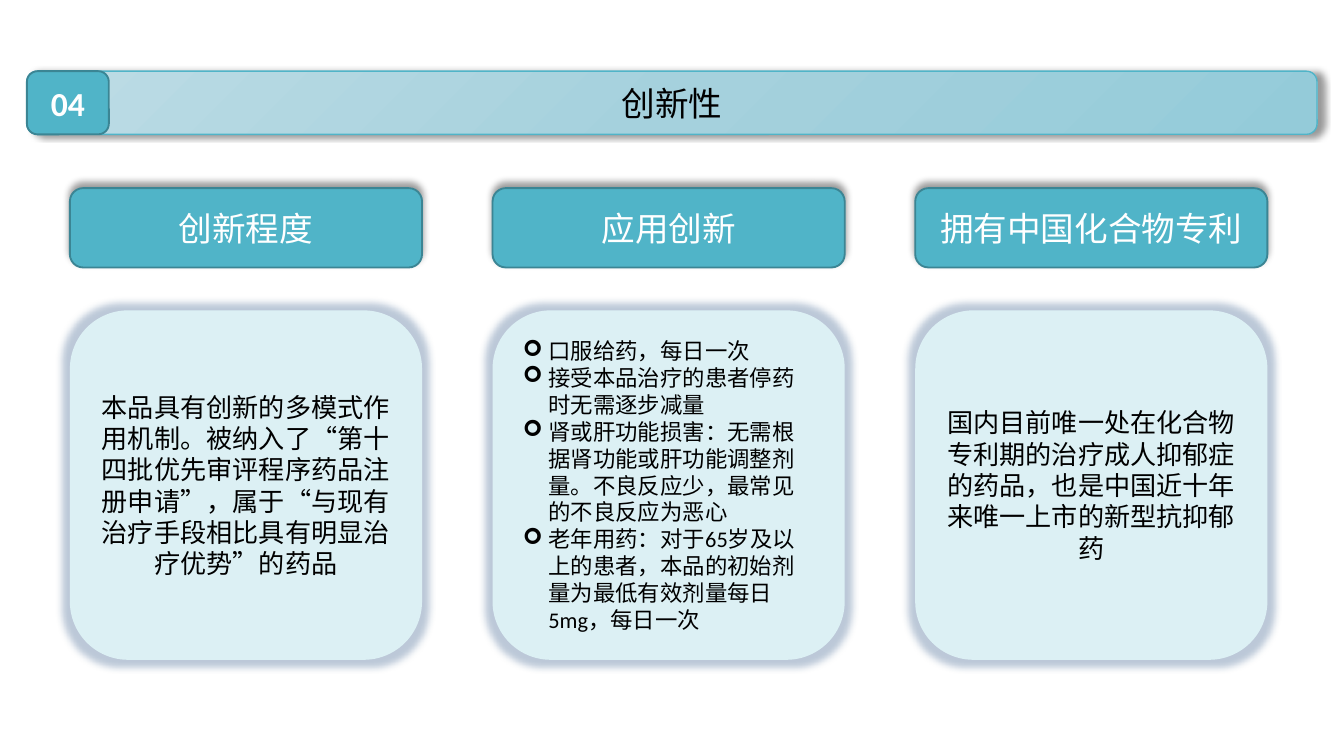
from copy import deepcopy
from lxml.etree import SubElement
from pptx import Presentation
from pptx.dml.color import RGBColor
from pptx.enum.shapes import MSO_SHAPE
from pptx.enum.text import MSO_ANCHOR, PP_ALIGN
from pptx.oxml.ns import qn
from pptx.util import Inches, Pt


def paint(code):
    return RGBColor.from_string(code)


class Deck:
    font = "Calibri"
    teal, edge, pale = "50B4C8", "3B8594", "DCF0F4"
    black, white, navy = "000000", "FFFFFF", "1F497D"
    fade = ("BDDCE5", "A5D1DD", "94CBD9")

    def __init__(self, wide, high):
        self.show = Presentation()
        self.show.slide_width = Inches(wide)
        self.show.slide_height = Inches(high)
        self.slide = self.show.slides.add_slide(self.show.slide_layouts[6])

    def box(self, left, top, wide, high, fill, line=None, width=1):
        shape = self.slide.shapes.add_shape(
            MSO_SHAPE.ROUNDED_RECTANGLE,
            Inches(left), Inches(top), Inches(wide), Inches(high))
        shape.shadow.inherit = False
        shape.fill.solid()
        shape.fill.fore_color.rgb = paint(fill)
        if line:
            shape.line.color.rgb = paint(line)
            shape.line.width = Pt(width)
        else:
            shape.line.fill.background()
        shape.text_frame.word_wrap = True
        shape.text_frame.vertical_anchor = MSO_ANCHOR.MIDDLE
        return shape

    def effect(self, shape, kind, color, alpha, **sizes):
        group = shape._element.spPr.find(qn("a:effectLst"))
        node = SubElement(group, qn(kind), {k: str(v) for k, v in sizes.items()})
        tint = SubElement(node, qn("a:srgbClr"), val=color)
        SubElement(tint, qn("a:alpha"), val=str(alpha * 1000))

    def shadow(self, shape, angle):
        self.effect(shape, "a:outerShdw", self.black, 40, blurRad=Pt(4),
                    dist=Pt(3), dir=angle * 60000, rotWithShape=0)

    def blend(self, shape):
        fill = shape.fill
        fill.gradient()
        fill.gradient_angle = 315
        group = shape._element.spPr.find(".//" + qn("a:gsLst"))
        group.insert(1, deepcopy(group[0]))
        for stop, color, place in zip(fill.gradient_stops, self.fade, (0, 0.5, 1)):
            stop.color.rgb = paint(color)
            stop.position = place

    def text(self, shape, lines, size, color, bold=False):
        frame = shape.text_frame
        for i, line in enumerate(lines):
            para = frame.add_paragraph() if i else frame.paragraphs[0]
            run = para.add_run()
            run.text = line
            run.font.name = self.font
            run.font.size = Pt(size)
            run.font.bold = bold
            run.font.color.rgb = paint(color)
            if len(lines) > 1:
                self.bullet(para)
            else:
                para.alignment = PP_ALIGN.CENTER

    def bullet(self, para):
        para.alignment = PP_ALIGN.LEFT
        props = para._p.get_or_add_pPr()
        props.set("marL", str(Inches(0.19)))
        props.set("indent", str(Inches(-0.19)))
        SubElement(props, qn("a:buFont"), typeface="Wingdings")
        SubElement(props, qn("a:buChar"), char="➢")

    def title(self, number, words):
        bar = self.box(0.2, 0.53, 9.6, 0.47, self.teal, self.teal, 0.75)
        self.blend(bar)
        self.shadow(bar, 0)
        self.text(bar, [words], 18, self.black)
        tab = self.box(0.2, 0.53, 0.61, 0.47, self.teal, self.edge)
        self.text(tab, [number], 18, self.white, True)

    def head(self, left, words):
        shape = self.box(left, 1.4, 2.62, 0.59, self.teal, self.edge)
        self.shadow(shape, 270)
        self.text(shape, [words], 18, self.white)

    def card(self, left, lines):
        shape = self.box(left, 2.31, 2.62, 2.6, self.pale)
        self.effect(shape, "a:glow", self.navy, 30, rad=Pt(8))
        self.text(shape, lines, 12 if len(lines) > 1 else 14, self.black)


def main():
    wide = 10
    deck = Deck(wide, wide * 9 / 16)
    deck.title("04", "创新性")
    topics = [
        ("创新程度", [
            "本品具有创新的多模式作用机制。被纳入了“第十四批优先审评程序药品注册申请”，"
            "属于“与现有治疗手段相比具有明显治疗优势”的药品"]),
        ("应用创新", [
            "口服给药，每日一次",
            "接受本品治疗的患者停药时无需逐步减量",
            "肾或肝功能损害：无需根据肾功能或肝功能调整剂量。不良反应少，最常见的不良反应为恶心",
            "老年用药：对于65岁及以上的患者，本品的初始剂量为最低有效剂量每日5mg，每日一次"]),
        ("拥有中国化合物专利", [
            "国内目前唯一处在化合物专利期的治疗成人抑郁症的药品，"
            "也是中国近十年来唯一上市的新型抗抑郁药"]),
    ]
    first, last = 0.52, 6.81
    step = (last - first) / (len(topics) - 1)
    for i, (name, lines) in enumerate(topics):
        left = first + i * step
        deck.head(left, name)
        deck.card(left, lines)
    deck.show.save("out.pptx")


if __name__ == "__main__":
    main()
